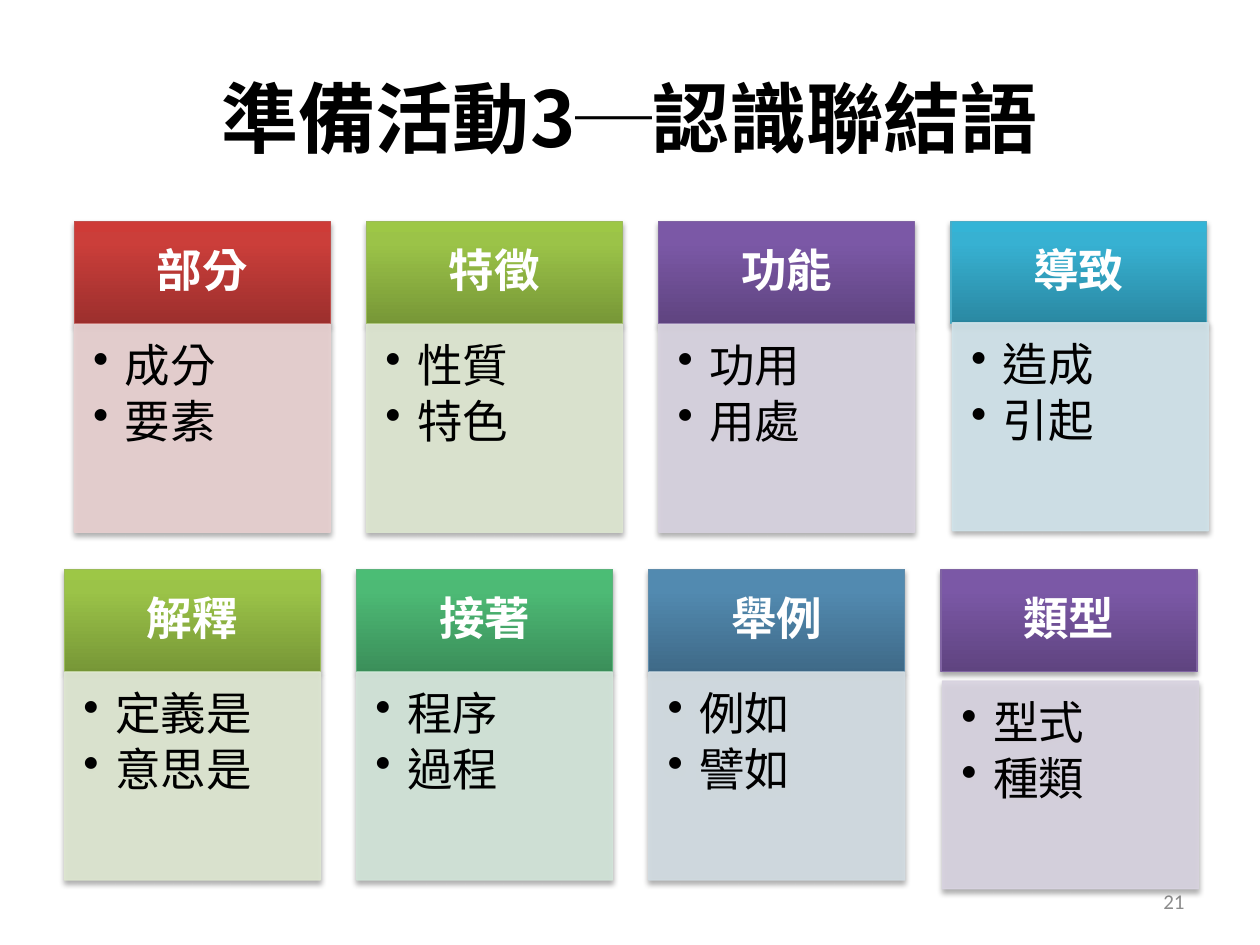
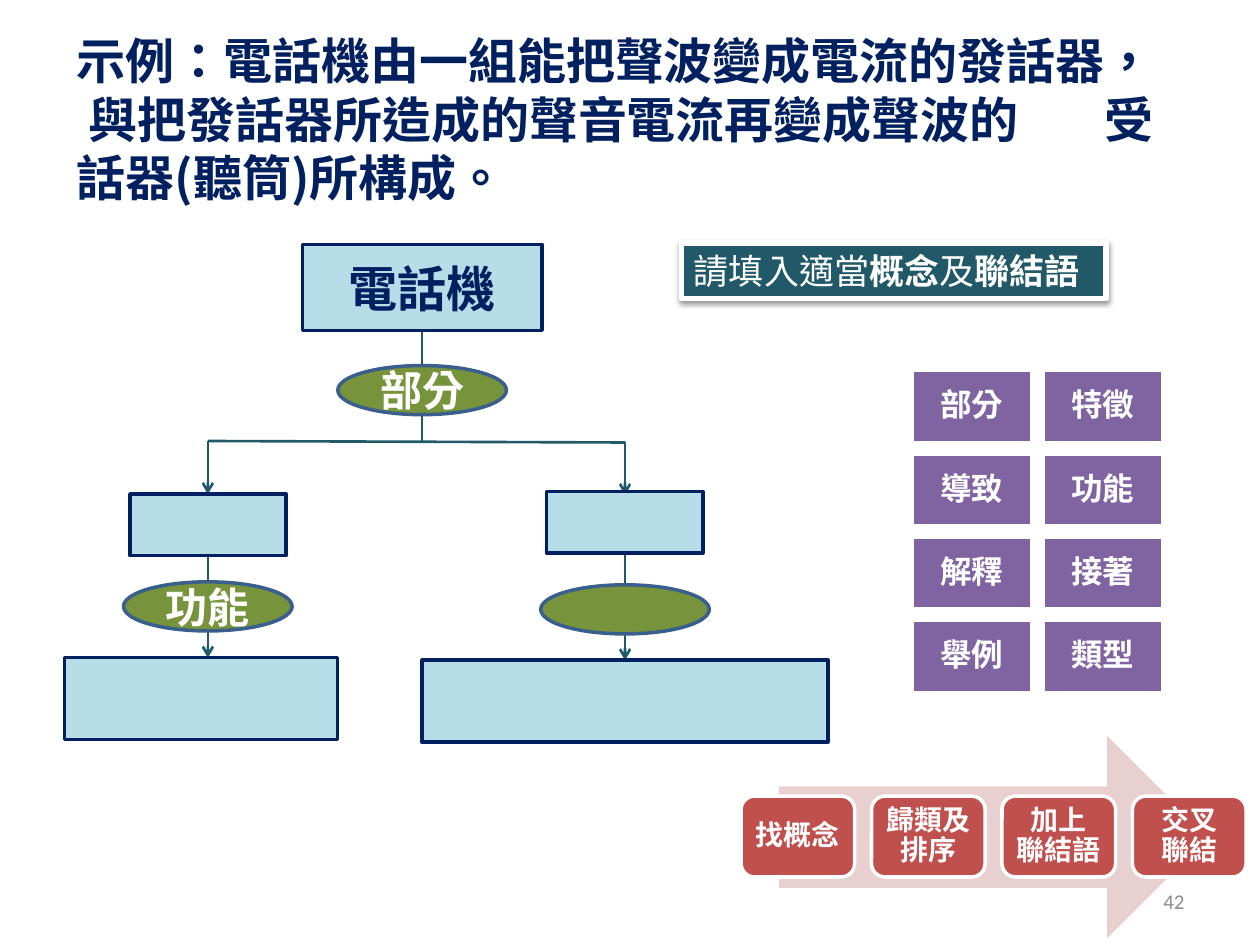
from dataclasses import dataclass
from typing import NamedTuple

import lxml.etree
import pptx
import pptx.dml.color
import pptx.enum.dml
import pptx.enum.lang
import pptx.enum.shapes
import pptx.enum.text
import pptx.oxml.ns
import pptx.util
from copy import deepcopy

Cm = pptx.util.Cm
qn = pptx.oxml.ns.qn
Kind = pptx.enum.shapes.MSO_SHAPE
Align = pptx.enum.text.PP_ALIGN
Anchor = pptx.enum.text.MSO_ANCHOR

HAN = "Noto Sans CJK SC"
LATIN = "Calibri"
WHITE, BLACK, NAVY, GREY = "FFFFFF", "000000", "002060", "8C8C8C"
PURPLE, RED, PINK = "8064A2", "C0504D", "E8D0D0"
SKY, TEAL, OLIVE, STEEL = "B7DEE8", "215968", "77933C", "3A5F8C"


class Box(NamedTuple):
    left: float
    top: float
    width: float
    height: float


class Link(NamedTuple):
    start: tuple[float, float]
    end: tuple[float, float]
    arrow: bool = False


@dataclass(frozen=True)
class Face:
    size: float
    hue: str = WHITE
    bold: bool = True
    align: Align = Align.CENTER
    anchor: Anchor = Anchor.MIDDLE
    pad: tuple[float, float, float, float] = (0.25, 0.13, 0.25, 0.13)
    lead: float | None = None
    after: float = 0
    bullet: bool = False
    tabs: tuple[float, ...] = ()
    font: str = HAN


@dataclass(frozen=True)
class Look:
    fill: str
    line: str | None = None
    weight: float = 2
    kind: Kind = Kind.RECTANGLE


class Tone(NamedTuple):
    dark: str
    mid: str
    light: str
    edge: str
    pale: str


class Card(NamedTuple):
    head: str
    items: str
    tone: Tone
    shift: tuple[float, float] = (0, 0)


class Row(NamedTuple):
    left: float
    top: float
    cards: list[Card]


ROSE = Tone("9C2F2D", "CB3E3A", "CE3B37", RED, PINK)
LIME = Tone("779737", "9BC348", "9DC746", "9BBB59", "DEE7D1")
PLUM = Tone("5F4480", "7B58A6", "7C57A8", PURPLE, "D8D3E0")
AQUA = Tone("2A88A2", "37B1D2", "34B4D6", "4BACC6", "D0E3EA")
JADE = Tone("3B8F5A", "4DBA75", "4BBD75", "5CB37C", "D2E5D9")
BLUE = Tone("3F6A88", "528AB0", "518BB3", "608CAB", "D2DCE2")

ROWS = [
    Row(1.5, 4.47, [
        Card("部分", "成分\n要素", ROSE),
        Card("特徵", "性質\n特色", LIME),
        Card("功能", "功用\n用處", PLUM),
        Card("導致", "造成\n引起", AQUA, (0.03, -0.03)),
    ]),
    Row(1.3, 11.48, [
        Card("解釋", "定義是\n意思是", LIME),
        Card("接著", "程序\n過程", JADE),
        Card("舉例", "例如\n譬如", BLUE),
        Card("類型", "型式\n種類", PLUM, (0.03, 0.18)),
    ]),
]
CHIPS = ["部分", "特徵", "導致", "功能", "解釋", "接著", "舉例", "類型"]
STEPS = ["找概念", "歸類及\v排序", "加上\v聯結語", "交叉\v聯結"]
LINKS = [
    Link((4.19, 8.89), (12.6, 8.92)),
    Link((4.19, 8.89), (4.19, 9.96), True),
    Link((12.6, 8.92), (12.6, 9.98), True),
    Link((4.19, 11.23), (4.19, 13.26), True),
    Link((12.6, 11.15), (12.6, 13.31), True),
    Link((8.51, 6.65), (8.51, 8.92)),
]
NODES = [
    (Box(6.1, 4.93, 4.83, 1.73), "電話機"),
    (Box(2.62, 9.96, 3.15, 1.24), ""),
    (Box(11.02, 9.91, 3.15, 1.24), ""),
    (Box(1.3, 13.26, 5.51, 1.65), ""),
    (Box(8.51, 13.31, 8.18, 1.65), ""),
]
OVALS = [
    (Box(6.81, 7.37, 3.4, 0.99), "部分"),
    (Box(2.49, 11.73, 3.4, 0.99), "功能"),
    (Box(10.9, 11.79, 3.4, 0.99), ""),
]

HEAD = Face(26, pad=(0.51, 0.3, 0.51, 0.3), lead=0.9)
BODY = Face(26, BLACK, False, Align.LEFT, Anchor.TOP,
            (0.38, 0.38, 0.51, 0.58), 0.9, 4, True)
CHIP = Face(18, pad=(0.18,) * 4, lead=0.9)
STEP = Face(16, pad=(0.15,) * 4, lead=0.9)
NODE = Face(28, NAVY)
OVAL = Face(24, pad=(0,) * 4)
NOTE = Face(20, bold=False, align=Align.LEFT)
TITLE = Face(44, BLACK)
LEDE = Face(28, NAVY, align=Align.LEFT, anchor=Anchor.BOTTOM, tabs=(0.24, 20.72))
PAGE = Face(12, GREY, False, Align.RIGHT, font=LATIN)


def rgb(code: str):
    return pptx.dml.color.RGBColor.from_string(code)


def add(parent, tag: str, **attrs):
    values = {key: str(value) for key, value in attrs.items()}
    return lxml.etree.SubElement(parent, qn(tag), values)


def place(box: Box) -> list:
    return [Cm(side) for side in box]


def write(shape, text: str, face: Face) -> None:
    frame = shape.text_frame
    frame.word_wrap = True
    frame.vertical_anchor = face.anchor
    (frame.margin_left, frame.margin_top,
     frame.margin_right, frame.margin_bottom) = map(Cm, face.pad)
    frame.text = text
    for para in frame.paragraphs:
        para.alignment = face.align
        para.line_spacing = face.lead
        if face.after:
            para.space_after = pptx.util.Pt(face.after)
        props = para._p.get_or_add_pPr()
        if face.bullet:
            props.set("marL", str(Cm(0.64)))
            props.set("indent", str(-Cm(0.64)))
            add(props, "a:buChar", char="•")
        if face.tabs:
            stops = add(props, "a:tabLst")
            for stop in face.tabs:
                add(stops, "a:tab", pos=Cm(stop), algn="l")
        font = para.font
        font.name = face.font
        font.size = pptx.util.Pt(face.size)
        font.bold = face.bold
        font.color.rgb = rgb(face.hue)
        font.language_id = pptx.enum.lang.MSO_LANGUAGE_ID.TRADITIONAL_CHINESE


def label(slide, box: Box, text: str, face: Face) -> None:
    write(slide.shapes.add_textbox(*place(box)), text, face)


def draw(slide, box: Box, look: Look, text: str = "", face: Face = NODE):
    shape = slide.shapes.add_shape(look.kind, *place(box))
    shape.shadow.inherit = False
    shape.fill.solid()
    shape.fill.fore_color.rgb = rgb(look.fill)
    if look.line:
        shape.line.color.rgb = rgb(look.line)
        shape.line.width = pptx.util.Pt(look.weight)
    else:
        shape.line.fill.background()
    if text:
        write(shape, text, face)
    return shape


def shade(shape, alpha: int, dist: float) -> None:
    effects = shape._element.spPr.find(qn("a:effectLst"))
    outer = add(effects, "a:outerShdw", blurRad=pptx.util.Pt(3.1),
                dist=pptx.util.Pt(dist), dir=5400000, rotWithShape=0)
    add(add(outer, "a:srgbClr", val=BLACK), "a:alpha", val=alpha * 1000)


def blend(shape, tone: Tone) -> None:
    shape.fill.gradient()
    shape.fill.gradient_angle = 90
    stops = shape._element.spPr.find(".//" + qn("a:gsLst"))
    stops.insert(1, deepcopy(stops[0]))
    for spot, node in zip((0, 80000, 100000), stops):
        node.set("pos", str(spot))
    for stop, hue in zip(shape.fill.gradient_stops, tone):
        stop.color.rgb = rgb(hue)


def deal(slide, card: Card, left: float, top: float) -> None:
    tone = card.tone
    head = draw(slide, Box(left, top, 5.16, 2.06),
                Look(tone.mid, tone.edge, 0.75), card.head, HEAD)
    blend(head, tone)
    spot = Box(left + card.shift[0], top + 2.07 + card.shift[1], 5.16, 4.19)
    body = draw(slide, spot, Look(tone.pale, tone.pale, 0.75), card.items, BODY)
    for hue in body._element.spPr.iter(qn("a:srgbClr")):
        add(hue, "a:alpha", val=90000)
    for part in (head, body):
        shade(part, 35, 1.8)


def join(slide, link: Link) -> None:
    ends = [Cm(value) for value in (*link.start, *link.end)]
    line = slide.shapes.add_connector(pptx.enum.shapes.MSO_CONNECTOR.STRAIGHT, *ends)
    line.line.color.rgb = rgb(TEAL)
    line.line.width = pptx.util.Pt(1.5)
    props = line._element.spPr
    if link.arrow:
        add(props.find(qn("a:ln")), "a:tailEnd", type="arrow")
    add(props, "a:effectLst")


def start(deck, number: int, title: str, box: Box, face: Face):
    slide = deck.slides.add_slide(deck.slide_layouts[6])
    label(slide, box, title, face)
    label(slide, Box(18.21, 17.65, 5.92, 1.02), str(number), PAGE)
    return slide


def words(deck) -> None:
    slide = start(deck, 21, "準備活動3─認識聯結語", Box(1.27, 0.76, 22.86, 3.18), TITLE)
    for row in ROWS:
        for col, card in enumerate(row.cards):
            deal(slide, card, row.left + col * 5.89, row.top)


def phone(deck) -> None:
    title = ("示例：電話機由一組能把聲波變成電流的發話器，\v"
             "\t與把發話器所造成的聲音電流再變成聲波的\t受\v"
             "話器(聽筒)所構成。")
    slide = start(deck, 42, title, Box(1.3, 1.12, 22.86, 3.18), LEDE)
    for pos, text in enumerate(CHIPS):
        row, col = divmod(pos, 2)
        box = Box(18.39 + col * 2.64, 7.47 + row * 1.68, 2.41, 1.45)
        draw(slide, box, Look(PURPLE, WHITE), text, CHIP)
    draw(slide, Box(15.7, 14.83, 8.66, 4.09), Look(PINK, kind=Kind.RIGHT_ARROW))
    for pos, text in enumerate(STEPS):
        box = Box(14.94 + pos * 2.63, 16.05, 2.29, 1.63)
        draw(slide, box, Look(RED, WHITE, kind=Kind.ROUNDED_RECTANGLE), text, STEP)
    for link in LINKS:
        join(slide, link)
    for box, text in NODES:
        draw(slide, box, Look(SKY, NAVY), text, NODE)
    for box, text in OVALS:
        draw(slide, box, Look(OLIVE, STEEL, kind=Kind.OVAL), text, OVAL)
    note = draw(slide, Box(13.74, 4.9, 8.56, 1.12), Look(TEAL, WHITE, 3), "請填入適當", NOTE)
    shade(note, 38, 1.6)
    para = note.text_frame.paragraphs[0]
    for text, bold in (("概念", True), ("及", False), ("聯結語", True)):
        run = para.add_run()
        run.text = text
        run.font.bold = bold


def main() -> None:
    deck = pptx.Presentation()
    deck.slide_width, deck.slide_height = Cm(25.4), Cm(19.05)
    words(deck)
    phone(deck)
    deck.save("out.pptx")


if __name__ == "__main__":
    main()
